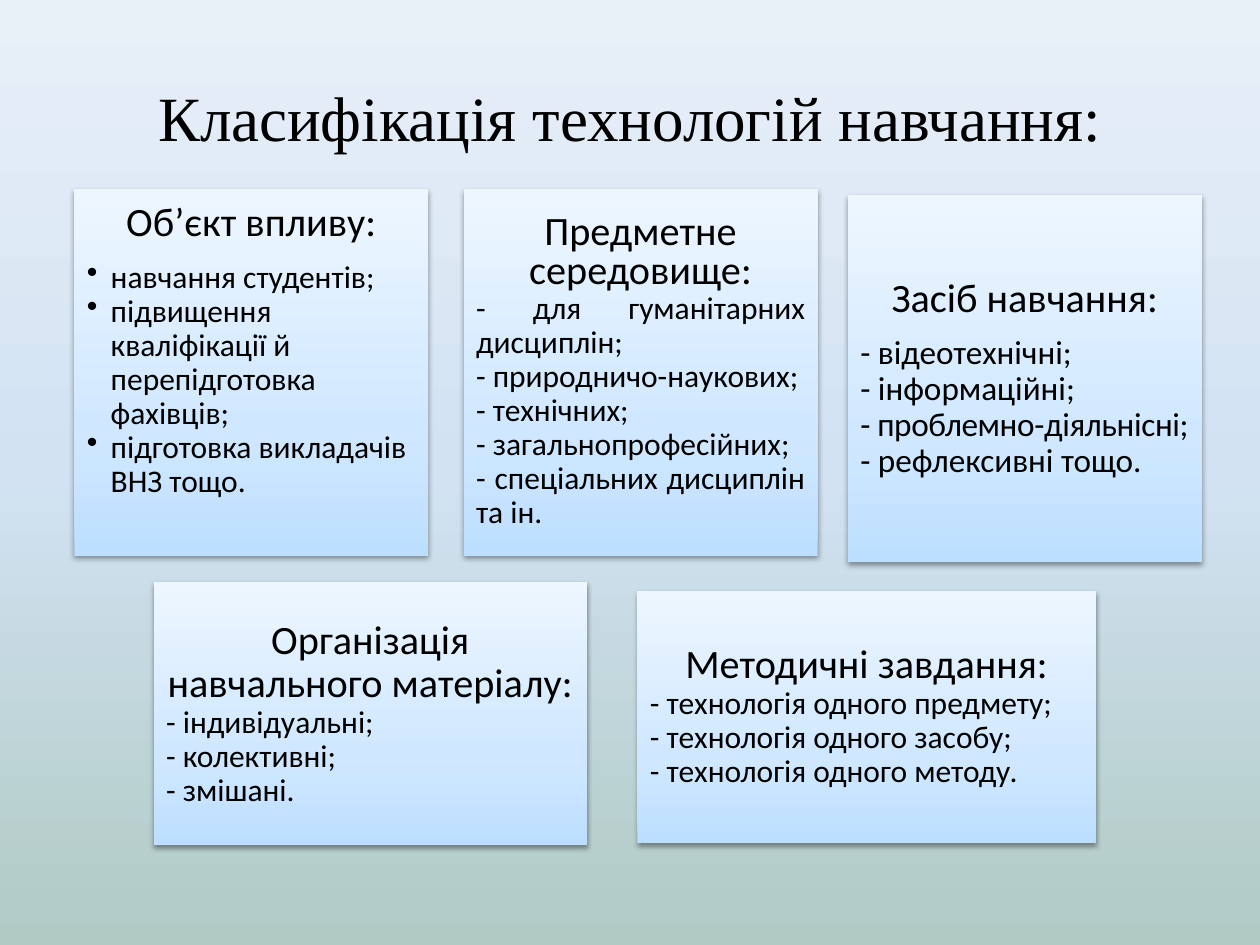
from copy import deepcopy

from lxml.etree import SubElement
from pptx import Presentation
from pptx.dml.color import RGBColor
from pptx.enum.shapes import MSO_SHAPE
from pptx.enum.text import MSO_ANCHOR, PP_ALIGN
from pptx.oxml.ns import qn
from pptx.util import Inches, Pt

COLORS = {
    "text": "000000",
    "shadow": "000000",
    "page": [(0, "B0CAC4"), (0.5, "D2E2F2"), (1, "E8F0F8")],
    "card": [(0, "BDDFFF"), (0.35, "D0E8FF"), (1, "EDF6FF")],
}
WIDTH, HEIGHT = Inches(10), Inches(7.5)
LEFT, CENTER, JUSTIFY = PP_ALIGN.LEFT, PP_ALIGN.CENTER, PP_ALIGN.JUSTIFY

CARDS = [
    dict(box=(5.9, 20, 28.1, 38.8), heading="Об’єкт впливу:", gap=9,
         anchor=MSO_ANCHOR.TOP, bullets=True, items=[
             ("навчання студентів;", LEFT),
             ("підвищення кваліфікації й перепідготовка фахівців;", LEFT),
             ("підготовка викладачів ВНЗ тощо.", LEFT)]),
    dict(box=(36.8, 20, 28.1, 38.8), heading="Предметне середовище:",
         heading_spacing=0.8, items=[
             ("- для гуманітарних дисциплін;", JUSTIFY),
             ("- природничо-наукових;", LEFT),
             ("- технічних;", LEFT),
             ("- загальнопрофесійних;", LEFT),
             ("- спеціальних дисциплін та ін.", JUSTIFY)]),
    dict(box=(67.3, 20.67, 28.1, 38.8), heading="Засіб навчання:", gap=8,
         size=19, tight="- проблемно-діяльнісні;", items=[
             ("- відеотехнічні;", LEFT),
             ("- інформаційні;", LEFT),
             ("- проблемно-діяльнісні;", LEFT),
             ("- рефлексивні тощо.", LEFT)]),
    dict(box=(12.2, 61.6, 34.4, 27.87),
         heading="Організація навчального матеріалу:", items=[
             ("- індивідуальні;", JUSTIFY),
             ("- колективні;", JUSTIFY),
             ("- змішані.", JUSTIFY)]),
    dict(box=(50.6, 62.53, 36.4, 26.67), heading="Методичні завдання:", items=[
        ("- технологія одного предмету;", LEFT),
        ("- технологія одного засобу;", JUSTIFY),
        ("- технологія одного методу.", JUSTIFY)]),
]


def place(box):
    left, top, width, height = box
    return (int(WIDTH * left / 100), int(HEIGHT * top / 100),
            int(WIDTH * width / 100), int(HEIGHT * height / 100))


def paint_gradient(fill, element, stops):
    fill.gradient()
    fill.gradient_angle = 90
    stop_list = next(element.iter(qn("a:gsLst")))
    stop_list.insert(1, deepcopy(stop_list[0]))
    for stop, (position, color) in zip(fill.gradient_stops, stops):
        stop.position = position
        stop.color.rgb = RGBColor.from_string(color)


def add_shadow(shape):
    shape.shadow.inherit = False
    effects = shape.element.spPr.find(qn("a:effectLst"))
    shadow = SubElement(effects, qn("a:outerShdw"), blurRad=str(Pt(3.1)),
                        dist=str(Pt(1.6)), dir="5400000", rotWithShape="0")
    color = SubElement(shadow, qn("a:srgbClr"), val=COLORS["shadow"])
    SubElement(color, qn("a:alpha"), val="38000")


def write(para, text, size, align, font="Calibri", spacing=0.9):
    para.text = text
    para.alignment = align
    para.line_spacing = spacing
    span = para.runs[0]
    span.font.name = font
    span.font.size = Pt(size)
    span.font.color.rgb = RGBColor.from_string(COLORS["text"])
    return span


def add_bullet(para):
    properties = para._p.get_or_add_pPr()
    properties.set("marL", str(Inches(0.19)))
    properties.set("indent", str(-Inches(0.19)))
    SubElement(properties, qn("a:buChar"), char="•")


def add_title(page, box, text):
    frame = page.shapes.add_textbox(*place(box)).text_frame
    frame.word_wrap = True
    frame.vertical_anchor = MSO_ANCHOR.MIDDLE
    write(frame.paragraphs[0], text, 36, CENTER, "Times New Roman", 1.0)


def add_card(page, box, heading, items, size=18, gap=0, heading_spacing=0.9,
             anchor=MSO_ANCHOR.MIDDLE, bullets=False, tight=None):
    card = page.shapes.add_shape(MSO_SHAPE.RECTANGLE, *place(box))
    paint_gradient(card.fill, card.element, COLORS["card"])
    card.line.fill.background()
    add_shadow(card)
    frame = card.text_frame
    frame.word_wrap = True
    frame.vertical_anchor = anchor
    frame.margin_left = frame.margin_right = Inches(0.1)
    frame.margin_top = frame.margin_bottom = Inches(0.1)
    write(frame.paragraphs[0], heading, 23, CENTER, spacing=heading_spacing)
    frame.paragraphs[0].space_after = Pt(gap)
    for text, align in items:
        para = frame.add_paragraph()
        if bullets:
            add_bullet(para)
        span = write(para, text, size, align)
        if text == tight:
            span.font._element.set("spc", "-20")


def main():
    deck = Presentation()
    deck.slide_width, deck.slide_height = WIDTH, HEIGHT
    page = deck.slides.add_slide(deck.slide_layouts[6])
    paint_gradient(page.background.fill, page.element, COLORS["page"])
    add_title(page, (5, 4, 90, 16.67), "Класифікація технологій навчання:")
    for card in CARDS:
        add_card(page, **card)
    deck.save("out.pptx")


if __name__ == "__main__":
    main()
